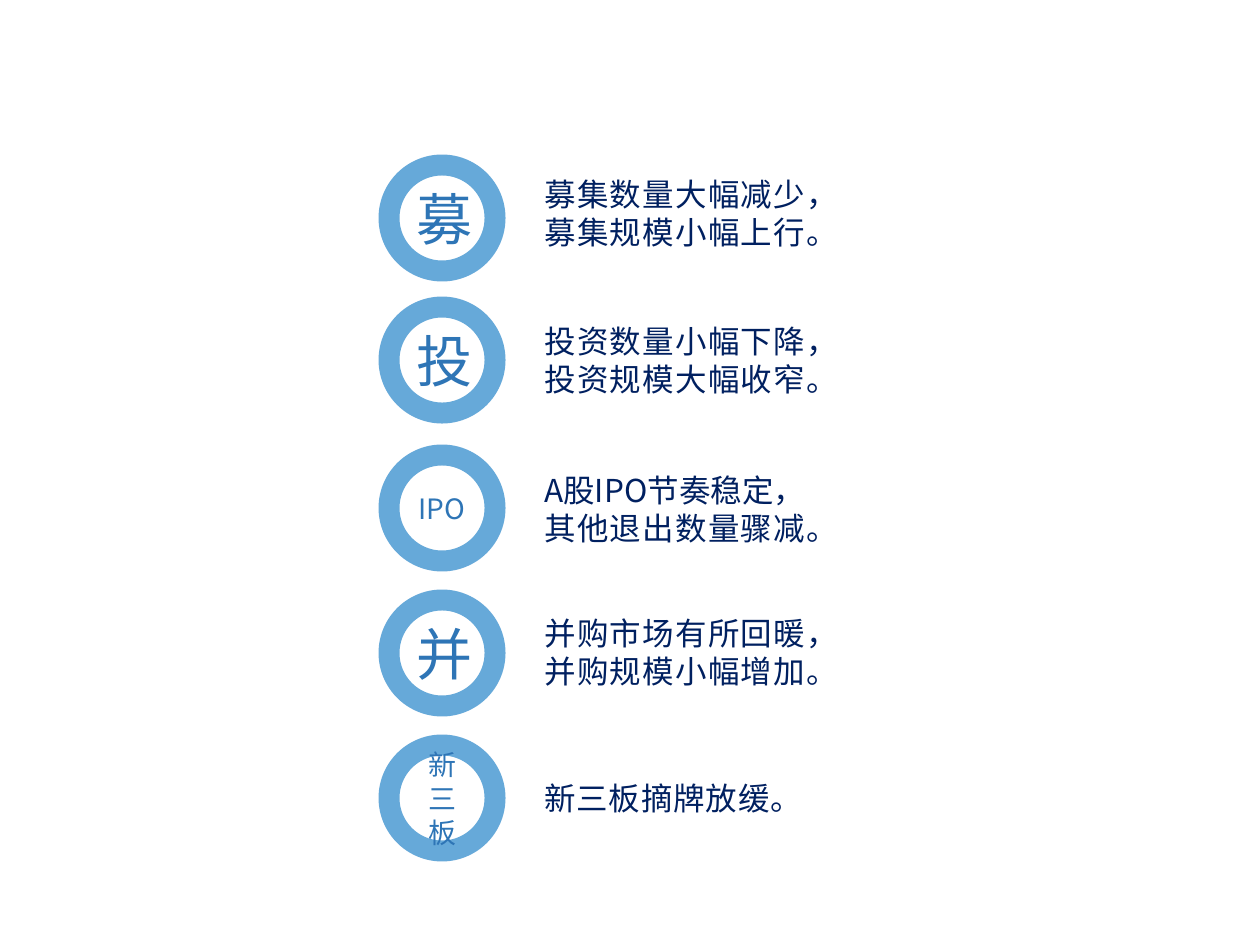
import pptx
import pptx.util
from lxml import etree
from pptx.dml.color import RGBColor
from pptx.enum.shapes import MSO_SHAPE
from pptx.enum.text import MSO_ANCHOR, PP_ALIGN
from pptx.oxml.ns import qn

EMU_PER_PX = 914400 / 126
COLORS = {"ring": "0070C0", "label": "2E75B6", "comment": "002060"}
LABEL_FONT = "Noto Sans CJK JP"
COMMENT_FONT = "Noto Sans CJK SC"
RING_LEFT, RING_SIZE = 389, 106
COMMENT_LEFT = 532

# label, label size, ring top, comment top, comment width, comment height, comment lines
TOPICS = [
    ("募", 32, 165, 168, 287, 89, ["募集数量大幅减少，", "募集规模小幅上行。"]),
    ("投", 32, 307, 315, 287, 89, ["投资数量小幅下降，", "投资规模大幅收窄。"]),
    ("IPO", 16, 455, 464, 287, 89, ["A股IPO节奏稳定，", "其他退出数量骤减。"]),
    ("并", 32, 600, 607, 287, 89, ["并购市场有所回暖，", "并购规模小幅增加。"]),
    ("新三板", 16, 745, 772, 251, 50, ["新三板摘牌放缓。"]),
]


def px(length):
    return pptx.util.Emu(round(length * EMU_PER_PX))


def write(frame, lines, *, size, font, color, align):
    """Fill the frame with one paragraph per line, letting end punctuation hang."""
    frame.word_wrap = True
    for index, line in enumerate(lines):
        paragraph = frame.add_paragraph() if index else frame.paragraphs[0]
        paragraph.alignment = align
        paragraph.line_spacing = pptx.util.Pt(round(size * 1.22, 1))
        paragraph._p.get_or_add_pPr().set("hangingPunct", "1")
        run = paragraph.add_run()
        run.text = line
        run.font.size = pptx.util.Pt(size)
        run.font.name = font
        run.font.color.rgb = RGBColor.from_string(COLORS[color])
        east_asian = etree.SubElement(run._r.get_or_add_rPr(), qn("a:ea"))
        east_asian.set("typeface", font)


class TopicSlide:
    def __init__(self, deck):
        self.slide = deck.slides.add_slide(deck.slide_layouts[6])

    def ring(self, top, label, size):
        ring = self.slide.shapes.add_shape(
            MSO_SHAPE.OVAL, px(RING_LEFT), px(top), px(RING_SIZE), px(RING_SIZE))
        ring.shadow.inherit = False
        ring.fill.background()
        ring.line.width = pptx.util.Pt(12)
        ring.line.color.rgb = RGBColor.from_string(COLORS["ring"])
        ring_color = ring.line._ln.find(".//" + qn("a:srgbClr"))
        etree.SubElement(ring_color, qn("a:alpha")).set("val", "60000")
        ring.text_frame.vertical_anchor = MSO_ANCHOR.MIDDLE
        write(ring.text_frame, [label], size=size, font=LABEL_FONT,
              color="label", align=PP_ALIGN.CENTER)

    def comment(self, top, width, height, lines):
        comment = self.slide.shapes.add_textbox(
            px(COMMENT_LEFT), px(top), px(width), px(height))
        write(comment.text_frame, lines, size=18, font=COMMENT_FONT,
              color="comment", align=PP_ALIGN.JUSTIFY)


def main():
    deck = pptx.Presentation()
    deck.slide_width, deck.slide_height = px(1260), px(945)
    page = TopicSlide(deck)
    for label, size, ring_top, comment_top, width, height, lines in TOPICS:
        page.ring(ring_top, label, size)
        page.comment(comment_top, width, height, lines)
    deck.save("out.pptx")


if __name__ == "__main__":
    main()
